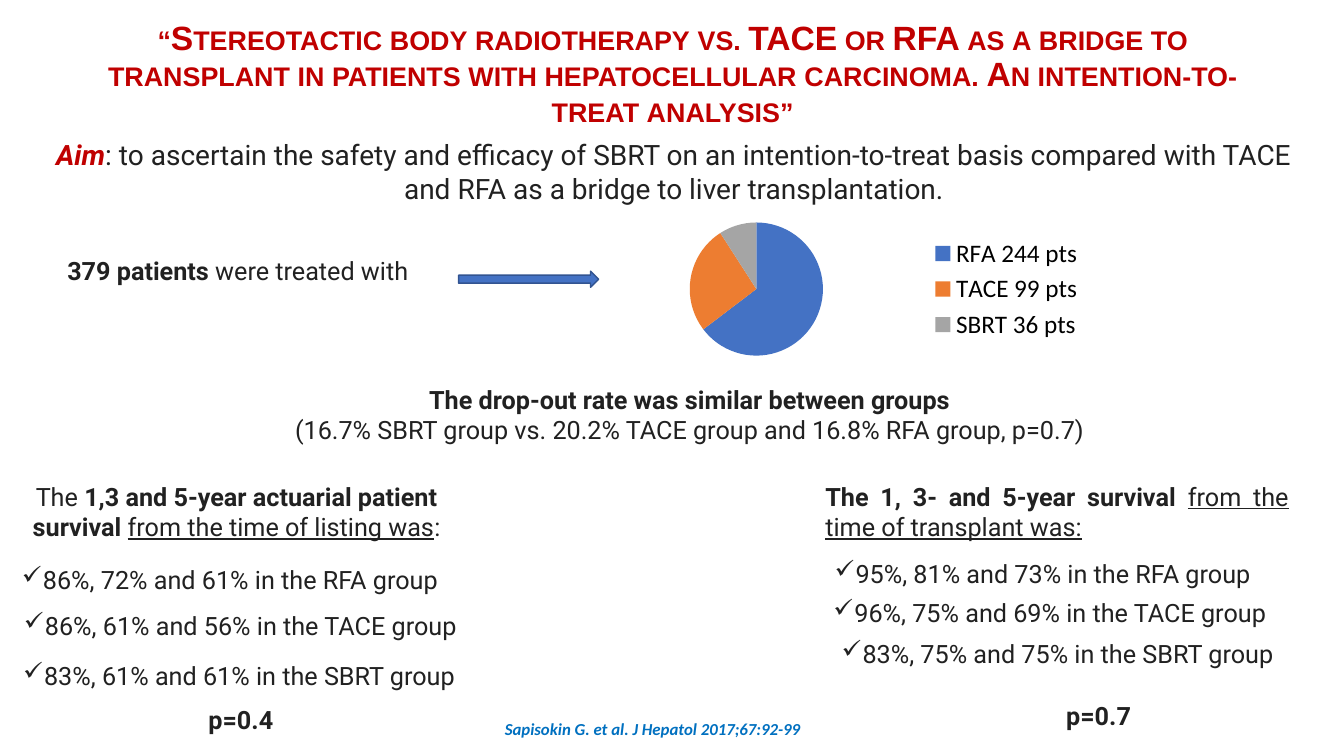
from lxml.etree import SubElement
from pptx import Presentation
from pptx.chart.data import CategoryChartData as PieData
from pptx.dml.color import RGBColor as Rgb
from pptx.enum.chart import XL_CHART_TYPE as Chart, XL_LEGEND_POSITION as Legend
from pptx.enum.shapes import MSO_SHAPE as Shape
from pptx.enum.text import MSO_ANCHOR as Anchor, PP_ALIGN as Align
from pptx.oxml.ns import qn
from pptx.util import Pt

COLORS = {
    "red": "C00000", "ink": "212121", "cite": "0070C0", "black": "000000",
    "blue": "4472C4", "orange": "ED7D31", "gray": "A5A5A5", "edge": "325491",
}


def color(name):
    return Rgb.from_string(COLORS[name])


def write(frame, paras, align=Align.LEFT, size=18, face="Roboto", ink="ink",
          bullet=False, caps=False, spacing=None):
    """Fill a frame; each paragraph is a list of (text, style) runs.

    The style letters are b (bold), i (italic), u (underline), r (red).
    """
    frame.word_wrap = True
    for n, runs in enumerate(paras):
        para = frame.add_paragraph() if n else frame.paragraphs[0]
        para.alignment = align
        if spacing:
            para.line_spacing = spacing
        if bullet:
            props = para._p.get_or_add_pPr()
            props.set("marL", str(Pt(15)))
            props.set("indent", str(-Pt(15)))
            SubElement(props, qn("a:buChar")).set("char", "✓")
        for text, style in runs:
            run = para.add_run()
            run.text = text
            font = run.font
            font.name, font.size = face, Pt(size)
            font.bold, font.italic = "b" in style, "i" in style
            font.underline = "u" in style
            font.color.rgb = color("red" if "r" in style else ink)
            if caps:
                run._r.get_or_add_rPr().set("cap", "small")


def label(slide, left, top, width, height, paras, **style):
    box = slide.shapes.add_textbox(Pt(left), Pt(top), Pt(width), Pt(height))
    write(box.text_frame, paras, **style)


def header(slide, left, top, width):
    title = slide.shapes.title
    title.left, title.top = Pt(left + 43), Pt(top)
    title.width, title.height = Pt(width - 88), Pt(82)
    frame = title.text_frame
    frame.vertical_anchor = Anchor.TOP
    frame.margin_top = frame.margin_bottom = 0
    write(frame, [[("“Stereotactic body radiotherapy vs. TACE or RFA as a bridge to "
                    "transplant in patients with hepatocellular carcinoma. "
                    "An intention-to-treat analysis”", "br")]],
          align=Align.CENTER, size=24, face="Arial", caps=True, spacing=0.9)
    label(slide, left, top + 80, width, 60, [[
        ("Aim", "bir"),
        (": to ascertain the safety and efficacy of SBRT on an intention-to-treat "
         "basis compared with TACE and RFA as a bridge to liver transplantation.", ""),
    ]], align=Align.CENTER, size=20)


def cohort(slide, left, top):
    """Patient count, arrow and pie of the three treatments."""
    label(slide, left, top + 29.5, 268, 29,
          [[("379 patients", "b"), (" were treated with", "")]])
    arrow = slide.shapes.add_shape(
        Shape.RIGHT_ARROW, Pt(left + 286.6), Pt(top + 44.7), Pt(100), Pt(11.5))
    arrow.shadow.inherit = False
    arrow.fill.solid()
    arrow.fill.fore_color.rgb = color("blue")
    arrow.line.color.rgb = color("edge")
    arrow.line.width = Pt(1)

    data = PieData()
    data.categories = ["RFA 244 pts", "TACE 99 pts", "SBRT 36 pts"]
    data.add_series("Series 1", [64, 26, 9])
    pie = slide.shapes.add_chart(
        Chart.PIE, Pt(left + 377.3), Pt(top), Pt(363), Pt(115), data).chart
    pie.has_title = False
    pie.font.name, pie.font.size = "Calibri", Pt(18)
    pie.font.color.rgb = color("black")
    pie.has_legend = True
    pie.legend.position = Legend.RIGHT
    pie.legend.include_in_layout = False
    plot = pie.plots[0]
    plot.vary_by_categories = True
    for n, name in enumerate(["blue", "orange", "gray"]):
        fill = plot.series[0].points[n].format.fill
        fill.solid()
        fill.fore_color.rgb = color(name)


def dropout(slide, left, top, width):
    label(slide, left, top, width, 51, [
        [("The drop-out rate was similar between groups", "b")],
        [("(16.7% SBRT group vs. 20.2% TACE group and 16.8% RFA group, p=0.7)", "")],
    ], align=Align.CENTER)


def survival(slide, left, top, width, heading, align, rates, chance):
    """Heading, ticked rates and p value, offset from the column's corner."""
    label(slide, left, top, width, 51, [heading], align=align)
    for dx, dy, rate in rates:
        label(slide, left + dx, top + dy, 342, 29, [[(rate, "")]], bullet=True)
    dx, dy, value = chance
    label(slide, left + dx, top + dy, 66, 29, [[(value, "b")]])


def main():
    deck = Presentation()
    deck.slide_width, deck.slide_height = Pt(960), Pt(540)
    slide = deck.slides.add_slide(deck.slide_layouts[5])
    header(slide, 23, 15, 917)
    cohort(slide, 41, 149)
    dropout(slide, 188.6, 270.7, 608)
    survival(
        slide, 7, 340, 324,
        [("The ", ""), ("1,3 and 5-year actuarial patient survival ", "b"),
         ("from the time of listing was", "u"), (":", "")], Align.CENTER,
        [(1.6, 59.6, "86%, 72% and 61% in the RFA group"),
         (3, 92.7, "86%, 61% and 56% in the TACE group"),
         (2.4, 128, "83%, 61% and 61% in the SBRT group")],
        (134.8, 159.7, "p=0.4"))
    survival(
        slide, 582.5, 340, 345,
        [("The 1, 3- and 5-year survival ", "b"),
         ("from the time of transplant was:", "u")], Align.JUSTIFY,
        [(6.5, 55.3, "95%, 81% and 73% in the RFA group"),
         (5.7, 83.4, "96%, 75% and 69% in the TACE group"),
         (11.5, 112.2, "83%, 75% and 75% in the SBRT group")],
        (172, 156.8, "p=0.7"))
    label(slide, 353.5, 509.8, 235, 22,
          [[("Sapisokin G. et al. J Hepatol 2017;67:92-99", "bi")]],
          size=12, face="Calibri", ink="cite")
    deck.save("out.pptx")


if __name__ == "__main__":
    main()
